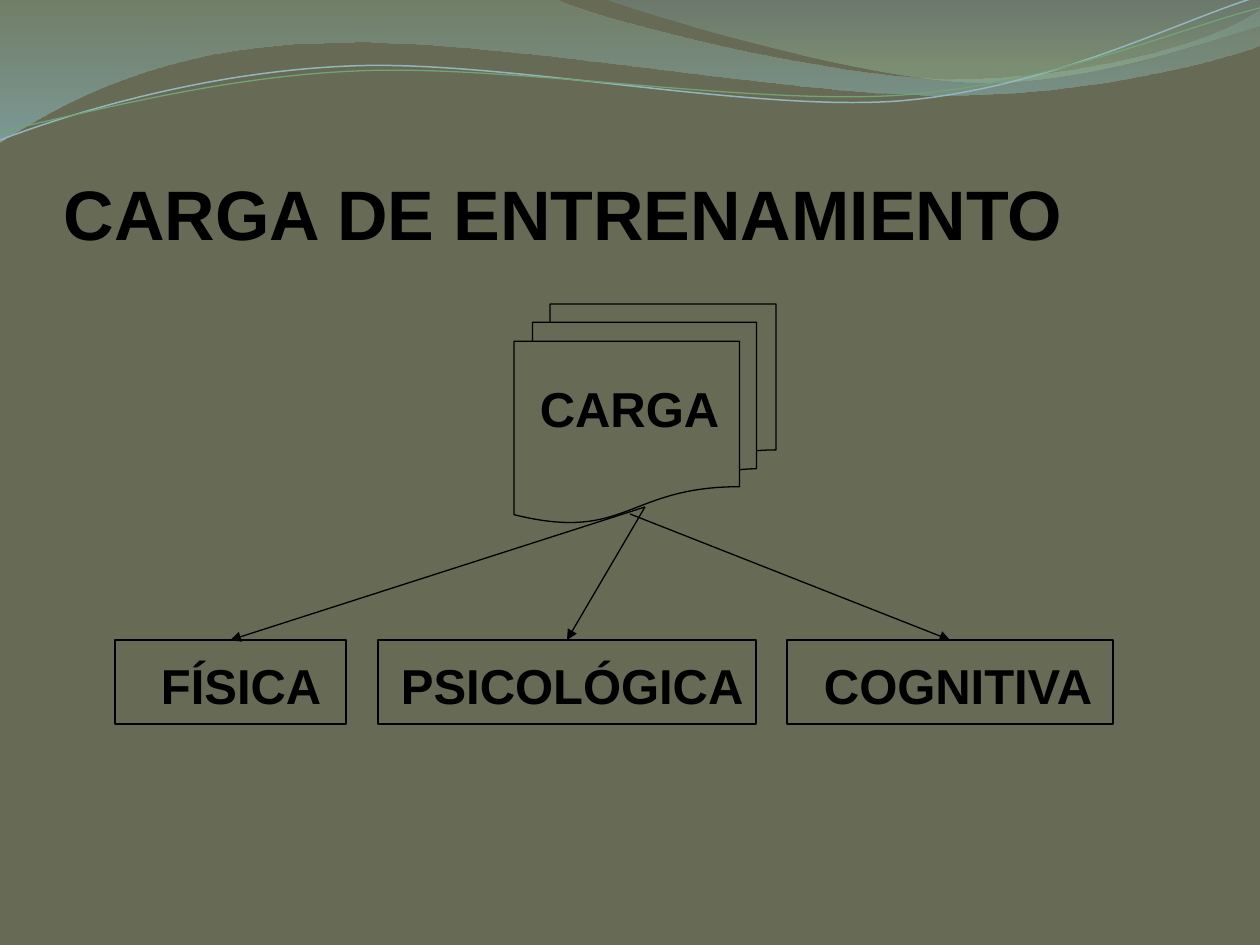
from pptx import Presentation
from pptx.dml.color import RGBColor
from pptx.enum.shapes import MSO_CONNECTOR, MSO_SHAPE
from pptx.enum.text import MSO_ANCHOR, PP_ALIGN
from pptx.oxml.ns import qn
from pptx.util import Pt
from lxml import etree

RECTANGLE = MSO_SHAPE.RECTANGLE
MULTIDOCUMENT = MSO_SHAPE.FLOWCHART_MULTIDOCUMENT
STRAIGHT = MSO_CONNECTOR.STRAIGHT
LEFT, CENTER = PP_ALIGN.LEFT, PP_ALIGN.CENTER
TOP, BOTTOM = MSO_ANCHOR.TOP, MSO_ANCHOR.BOTTOM

PX = 914400 / 126
FONT = "Arial"
COLORS = {
    "background": "676A55", "ink": "000000",
    "sage": "809980", "sky": "8DC1CF", "slate": "779BA4", "leaf": "96B996",
    "blue line": "94B5BE", "green line": "72A376",
}

BANDS = [
    {"start": (0, 0),
     "segments": [(554, -1), (600, 21, 837, 79, 955, 79), (1075, 79, 1207, 47, 1260, 11),
                  (1261, 45), (1239, 55, 1096, 96, 940, 95), (784, 95, 481, 35, 324, 43),
                  (163, 45, 58, 105, -1, 142)],
     "stops": [(0, "sage", 45), (1, "sky", 55)]},
    {"start": (604, -1),
     "segments": [(641, 14, 859, 78, 969, 82), (1079, 87, 1211, 40, 1260, 26), (1260, 0)],
     "stops": [(0, "slate", 30), (0.8, "leaf", 45)]},
]
STRANDS = [
    {"start": (0, 140), "color": "blue line", "width": 0.85,
     "segments": [(60, 117, 199, 72, 349, 66), (498, 59, 747, 112, 898, 101),
                  (1050, 89, 1182, 19, 1257, -3)]},
    {"start": (0, 131), "color": "green line", "width": 0.75,
     "segments": [(59, 121, 207, 77, 357, 71), (507, 64, 752, 106, 903, 95),
                  (1053, 84, 1186, 26, 1260, 8)]},
]

TITLE = "CARGA DE ENTRENAMIENTO"
ROOT = "CARGA"
LOADS = [
    {"text": "FÍSICA", "left": 115, "width": 231, "tab": 0, "origin": (645, 507)},
    {"text": "PSICOLÓGICA", "left": 378, "width": 378, "tab": 240, "origin": (645, 507)},
    {"text": "COGNITIVA", "left": 787, "width": 326, "tab": 663, "origin": (630, 514)},
]
LOAD_TOP, LOAD_HEIGHT = 640, 84


def emu(*lengths):
    return [round(length * PX) for length in lengths]


def color(name):
    return RGBColor.from_string(COLORS[name])


def add_wave(page, wave, close):
    points = [wave["start"]] + [segment[-2:] for segment in wave["segments"]]
    left, top = (min(axis) for axis in zip(*points))
    builder = page.shapes.build_freeform(*emu(*wave["start"]), scale=1.0)
    builder.add_line_segments([emu(*point) for point in points[1:]], close=close)
    shape = builder.convert_to_shape()
    shape.shadow.inherit = False
    lines = list(shape._element.spPr.iter(qn("a:lnTo")))
    for line, segment in zip(lines, wave["segments"]):
        if len(segment) == 2:
            continue
        curve = etree.Element(qn("a:cubicBezTo"))
        for x, y in zip(segment[::2], segment[1::2]):
            across, down = emu(x - left, y - top)
            etree.SubElement(curve, qn("a:pt"), x=str(across), y=str(down))
        line.getparent().replace(line, curve)
    return shape


def add_band(page, band):
    shape = add_wave(page, band, True)
    shape.line.fill.background()
    shape.fill.gradient()
    shape.fill.gradient_angle = 270
    for stop, (position, name, opacity) in zip(shape.fill.gradient_stops, band["stops"]):
        stop.position = position
        stop.color.rgb = color(name)
    nodes = shape._element.spPr.iter(qn("a:srgbClr"))
    for node, (_, _, opacity) in zip(nodes, band["stops"]):
        etree.SubElement(node, qn("a:alpha"), val=str(opacity * 1000))


def set_line(shape, name="ink", width=0.75):
    shape.line.color.rgb = color(name)
    shape.line.width = Pt(width)


def add_text(page, place, insets, anchor):
    box = page.shapes.add_textbox(*emu(*place))
    frame = box.text_frame
    frame.word_wrap = True
    frame.vertical_anchor = anchor
    (frame.margin_left, frame.margin_top,
     frame.margin_right, frame.margin_bottom) = emu(*insets)
    return frame


def write(para, text, size=28, align=LEFT, before=0, tabs=()):
    para.alignment = align
    para.space_before = Pt(before)
    if tabs:
        stops = etree.SubElement(para._p.get_or_add_pPr(), qn("a:tabLst"))
        for position in emu(*tabs):
            etree.SubElement(stops, qn("a:tab"), pos=str(position), algn="l")
    span = para.add_run()
    span.text = text
    span.font.name = FONT
    span.font.size = Pt(size)
    span.font.bold = True
    span.font.color.rgb = color("ink")


def add_outline(page, kind, *place):
    shape = page.shapes.add_shape(kind, *emu(*place))
    shape.shadow.inherit = False
    shape.fill.background()
    set_line(shape)
    return shape


def add_arrow(page, origin, target):
    arrow = page.shapes.add_connector(STRAIGHT, *emu(*origin), *emu(*origin))
    arrow.end_connect(target, 0)
    set_line(arrow)
    etree.SubElement(arrow.line._get_or_add_ln(), qn("a:tailEnd"), type="triangle")
    etree.SubElement(arrow._element.spPr, qn("a:effectLst"))


def main():
    deck = Presentation()
    deck.slide_width, deck.slide_height = emu(1260, 945)
    page = deck.slides.add_slide(deck.slide_layouts[6])
    page.background.fill.solid()
    page.background.fill.fore_color.rgb = color("background")

    for band in BANDS:
        add_band(page, band)
    for strand in STRANDS:
        shape = add_wave(page, strand, False)
        shape.fill.background()
        set_line(shape, strand["color"], strand["width"])

    title = add_text(page, (63, 97, 1134, 158), (1, 6, 0, 0), BOTTOM)
    write(title.paragraphs[0], TITLE, size=40)

    body = add_text(page, (94, 368, 1071, 472), (67, 10, 67, 6), TOP)
    write(body.paragraphs[0], ROOT, align=CENTER)
    write(body.add_paragraph(), "\t".join(load["text"] for load in LOADS),
          before=125, tabs=[load["tab"] for load in LOADS[1:]])

    boxes = [add_outline(page, RECTANGLE, load["left"], LOAD_TOP, load["width"], LOAD_HEIGHT)
             for load in LOADS]
    for load, box in zip(LOADS, boxes):
        add_arrow(page, load["origin"], box)
    add_outline(page, MULTIDOCUMENT, 514, 304, 262, 219)
    deck.save("out.pptx")


if __name__ == "__main__":
    main()
